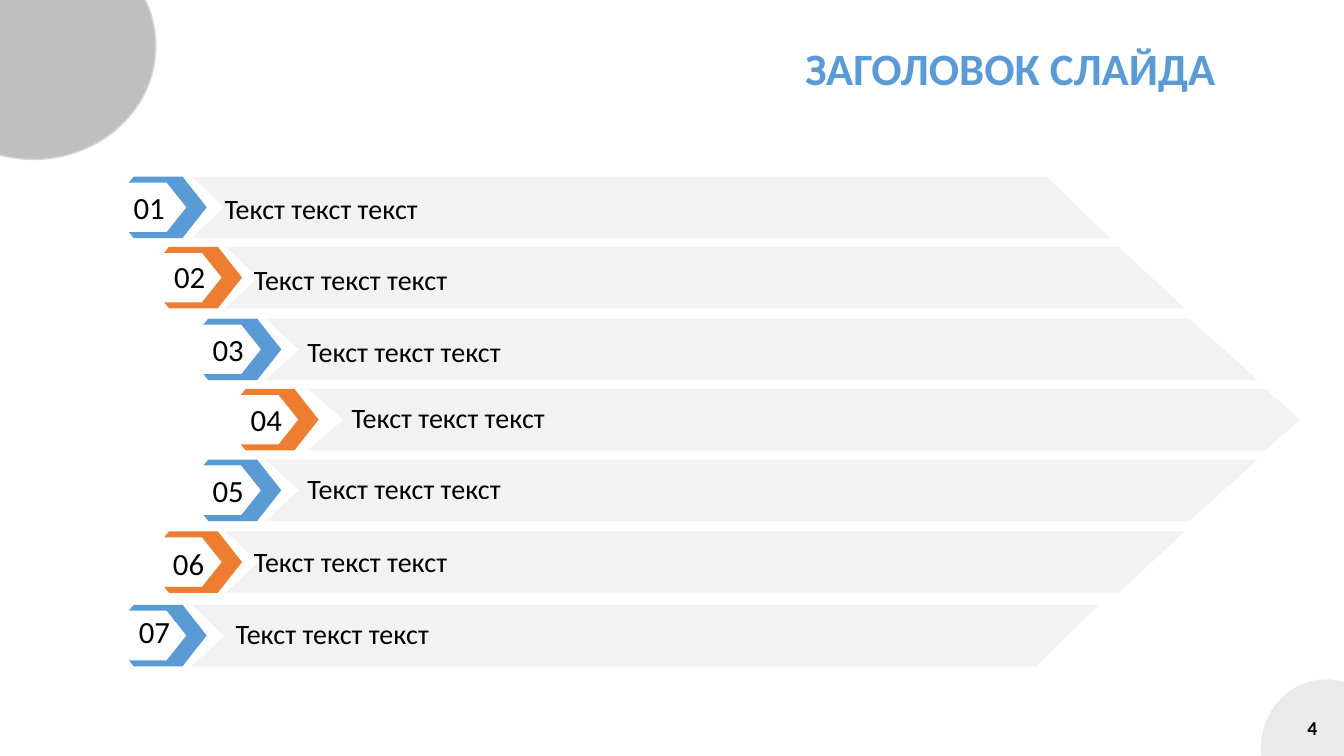
from dataclasses import dataclass
from typing import Optional

from lxml import etree
from pptx import Presentation
from pptx import util as u
from pptx.dml.color import RGBColor
from pptx.enum import shapes, text
from pptx.oxml.ns import qn

COLORS = {
    "blue": "5B9BD5",
    "orange": "ED7D31",
    "bar": "F2F2F2",
    "circle": "BFBFBF",
    "pale": "D9D9D9",
    "black": "000000",
}
FONT = "Calibri"
ROW_HEIGHT = 1.55
MIDDLE = ROW_HEIGHT / 2
RIM = 0.15
CHEVRON = [
    (1.35, 0), (0.12, 0), (0, RIM), (0.95, RIM), (1.45, MIDDLE),
    (0.95, ROW_HEIGHT - RIM), (0, ROW_HEIGHT - RIM),
    (0.12, ROW_HEIGHT), (1.35, ROW_HEIGHT), (1.96, MIDDLE),
]


@dataclass
class Box:
    left: float
    top: float
    width: float
    height: float

    def lengths(self) -> list:
        return [u.Cm(value) for value in (self.left, self.top, self.width, self.height)]


@dataclass
class Style:
    size: int
    color: str = "black"
    bold: bool = False
    align: text.PP_ALIGN = text.PP_ALIGN.LEFT
    anchor: text.MSO_ANCHOR = text.MSO_ANCHOR.TOP
    side_inset: float = 0.25
    spacing: Optional[float] = None
    grow: bool = False


@dataclass
class Level:
    chevron_left: float
    bar_left: float
    notch: float


@dataclass
class Row:
    level: Level
    top: float
    right_top: float
    right_bottom: float
    number: tuple
    label: tuple
    label_width: float
    tip: Optional[float] = None


LEVELS = [
    Level(3.25, 4.83, 0.82),
    Level(4.14, 5.68, 0.83),
    Level(5.13, 6.68, 0.86),
    Level(6.07, 7.75, 0.91),
]
ROWS = [
    Row(LEVELS[0], 4.45, 26.37, 27.97, (3.12, 4.62), (5.66, 4.7), 19.79),
    Row(LEVELS[1], 6.22, 28.19, 29.85, (4.14, 6.38), (6.4, 6.48), 21.56),
    Row(LEVELS[2], 8.03, 29.97, 31.7, (5.11, 8.2), (7.75, 8.31), 21.69),
    Row(LEVELS[3], 9.8, 31.88, 31.88, (6.07, 9.98), (8.86, 9.98), 19.94, 32.77),
    Row(LEVELS[2], 11.58, 31.7, 29.97, (5.11, 11.76), (7.75, 11.76), 19.94),
    Row(LEVELS[1], 13.39, 29.85, 28.19, (4.11, 13.59), (6.4, 13.59), 22.73),
    Row(LEVELS[0], 15.24, 27.69, 26.11, (3.25, 15.32), (5.94, 15.42), 19.94),
]
TITLE = Style(32, "blue", True, text.PP_ALIGN.RIGHT, text.MSO_ANCHOR.MIDDLE, spacing=0.75)
PAGE = Style(14, "black", True, text.PP_ALIGN.RIGHT, text.MSO_ANCHOR.MIDDLE)
NUMBER = Style(22, grow=True)
LABEL = Style(20, align=text.PP_ALIGN.JUSTIFY, side_inset=0, grow=True)


def rgb(name: str) -> RGBColor:
    return RGBColor.from_string(COLORS[name])


def paint(shape, color: str) -> None:
    shape.shadow.inherit = False
    shape.fill.solid()
    shape.fill.fore_color.rgb = rgb(color)
    shape.line.fill.background()


def add_circle(slide, box: Box, color: str):
    circle = slide.shapes.add_shape(shapes.MSO_SHAPE.OVAL, *box.lengths())
    paint(circle, color)
    return circle


def set_opacity(shape, percent: int) -> None:
    color = shape._element.spPr.find(qn("a:solidFill"))[0]
    etree.SubElement(color, qn("a:alpha")).set("val", str(percent * 1000))


def add_outline(slide, points: list, color: str) -> None:
    corners = [(u.Cm(x), u.Cm(y)) for x, y in points]
    builder = slide.shapes.build_freeform(*corners[0])
    builder.add_line_segments(corners[1:], close=True)
    paint(builder.convert_to_shape(), color)


def add_text(slide, box: Box, words: str, style: Style) -> None:
    frame = slide.shapes.add_textbox(*box.lengths()).text_frame
    frame.word_wrap = True
    frame.vertical_anchor = style.anchor
    frame.margin_left = frame.margin_right = u.Cm(style.side_inset)
    if style.grow:
        frame.auto_size = text.MSO_AUTO_SIZE.SHAPE_TO_FIT_TEXT
    paragraph = frame.paragraphs[0]
    paragraph.alignment = style.align
    if style.spacing:
        paragraph.line_spacing = style.spacing
    run = paragraph.add_run()
    run.text = words
    run.font.name = FONT
    run.font.size = u.Pt(style.size)
    run.font.bold = style.bold
    run.font.color.rgb = rgb(style.color)


def add_row(slide, index: int, row: Row) -> None:
    level = row.level
    middle, bottom = row.top + MIDDLE, row.top + ROW_HEIGHT
    chevron = [(level.chevron_left + x, row.top + y) for x, y in CHEVRON]
    add_outline(slide, chevron, "orange" if index % 2 else "blue")
    tip = [(row.tip, middle)] if row.tip else []
    bar = [
        (level.bar_left, row.top),
        (level.bar_left + level.notch, middle),
        (level.bar_left, bottom),
        (row.right_bottom, bottom),
        *tip,
        (row.right_top, row.top),
    ]
    add_outline(slide, bar, "bar")
    add_text(slide, Box(*row.label, row.label_width, 1.11), "Текст текст текст", LABEL)
    add_text(slide, Box(*row.number, 1.83, 1.2), f"{index + 1:02}", NUMBER)


def main() -> None:
    presentation = Presentation()
    presentation.slide_width = u.Cm(33.87)
    presentation.slide_height = u.Cm(19.05)
    slide = presentation.slides.add_slide(presentation.slide_layouts[6])

    set_opacity(add_circle(slide, Box(31.78, 17.12, 3.28, 3.45), "pale"), 53)
    add_text(slide, Box(25.83, 17.83, 7.62, 1.02), "4", PAGE)
    corner = add_circle(slide, Box(-2.24, -1.7, 6.17, 5.72), "circle")
    corner.line.color.rgb = rgb("pale")
    corner.line.width = u.Pt(1)

    for index, row in enumerate(ROWS):
        add_row(slide, index, row)
    add_text(slide, Box(10.52, 1.02, 20.37, 1.65), "ЗАГОЛОВОК СЛАЙДА", TITLE)
    presentation.save("out.pptx")


if __name__ == "__main__":
    main()
